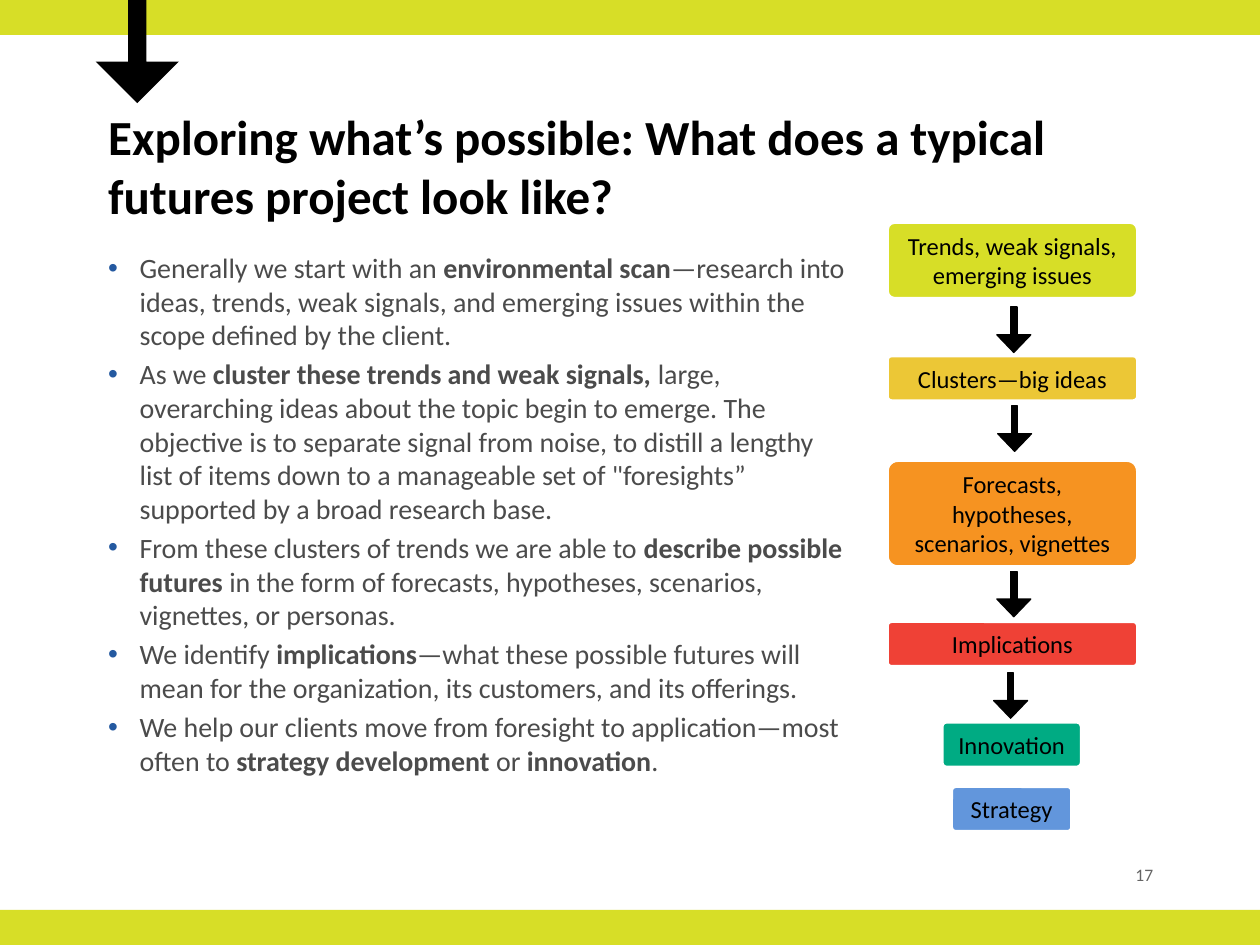
from typing import NamedTuple

from lxml.etree import SubElement
from pptx import Presentation
from pptx.dml.color import RGBColor
from pptx.enum.shapes import MSO_SHAPE as Preset
from pptx.enum.text import MSO_ANCHOR as Anchor, PP_ALIGN as Align
from pptx.oxml.ns import qn
from pptx.util import Pt

FONT = "Calibri"
BLACK = RGBColor(0, 0, 0)
WHITE = RGBColor(255, 255, 255)
LIME = RGBColor(0xD7, 0xDE, 0x27)
YELLOW = RGBColor(0xEC, 0xC7, 0x36)
ORANGE = RGBColor(0xF6, 0x93, 0x21)
RED = RGBColor(0xEF, 0x41, 0x36)
GREEN = RGBColor(0x00, 0xAB, 0x83)
BLUE = RGBColor(0x62, 0x96, 0xDC)
BULLET_BLUE = RGBColor(0x24, 0x59, 0xA0)
BODY_GRAY = RGBColor(0x4B, 0x4B, 0x4B)
NUMBER_GRAY = RGBColor(0x64, 0x64, 0x64)

PAGE_WIDTH, PAGE_HEIGHT = 720, 540
BAND_HEIGHT = 20
LEFT_MARGIN = 54.7
INDENT = 18
STEP_LEFT, STEP_WIDTH, STEP_HEIGHT = 506.9, 143.3, 26


class Area(NamedTuple):
    left: float
    top: float
    width: float
    height: float


class Step(NamedTuple):
    text: str
    color: RGBColor
    top: float
    height: float = STEP_HEIGHT
    left: float = STEP_LEFT
    width: float = STEP_WIDTH


class Arrow(NamedTuple):
    center: float
    top: float


class Span(NamedTuple):
    text: str
    bold: bool = False


STEPS = [
    Step("Trends, weak signals, emerging issues", LIME, 126.9, 43.8),
    Step("Clusters—big ideas", YELLOW, 203.2),
    Step("Forecasts, hypotheses, scenarios, vignettes", ORANGE, 263, 61),
    Step("Implications", RED, 355),
    Step("Innovation", GREEN, 412.5, left=538.2, width=79.8),
    Step("Strategy", BLUE, 449.3, left=543.6, width=69),
]
ARROWS = [Arrow(579.3, 175.5), Arrow(579.8, 232), Arrow(579.3, 326.5), Arrow(577.5, 384.5)]
BULLETS = [
    [
        Span("Generally we start with an "),
        Span("environmental scan", True),
        Span("—research into ideas, trends, weak signals, and emerging issues "
             "within the scope defined by the client."),
    ],
    [
        Span("As we "),
        Span("cluster these trends and weak signals, ", True),
        Span("large, overarching ideas about the topic begin to emerge. The objective "
             "is to separate signal from noise, to distill a lengthy list of items down "
             "to a manageable set of \"foresights” supported by a broad research base."),
    ],
    [
        Span("From these clusters of trends we are able to "),
        Span("describe possible futures ", True),
        Span("in the form of forecasts, hypotheses, scenarios, vignettes, or personas."),
    ],
    [
        Span("We identify "),
        Span("implications", True),
        Span("—what these possible futures will mean for the organization, "
             "its customers, and its offerings."),
    ],
    [
        Span("We help our clients move from foresight to application—most often to "),
        Span("strategy development ", True),
        Span("or "),
        Span("innovation", True),
        Span("."),
    ],
]


def set_font(font, size: float, color: RGBColor, bold: bool = False) -> None:
    font.name = FONT
    font.size = Pt(size)
    font.color.rgb = color
    font.bold = bold


def add_block(page, preset, area: Area, color: RGBColor, line=None, weight: float = 0.75):
    block = page.shapes.add_shape(preset, *map(Pt, area))
    block.shadow.inherit = False
    block.fill.solid()
    block.fill.fore_color.rgb = color
    if line is None:
        block.line.fill.background()
    else:
        block.line.color.rgb = line
        block.line.width = Pt(weight)
    return block


def add_text_box(page, area: Area, anchor):
    frame = page.shapes.add_textbox(*map(Pt, area)).text_frame
    frame.word_wrap = True
    frame.vertical_anchor = anchor
    return frame


def write_line(frame, text: str, size: float, color: RGBColor, align, bold: bool = False) -> None:
    frame.text = text
    paragraph = frame.paragraphs[0]
    paragraph.alignment = align
    set_font(paragraph.runs[0].font, size, color, bold)


def add_bullet(paragraph) -> None:
    properties = paragraph._p.get_or_add_pPr()
    properties.set("marL", str(Pt(INDENT)))
    properties.set("indent", str(Pt(-INDENT)))
    color = SubElement(properties, qn("a:buClr"))
    SubElement(color, qn("a:srgbClr"), val=str(BULLET_BLUE))
    SubElement(properties, qn("a:buFont"), typeface="Arial")
    SubElement(properties, qn("a:buChar"), char="•")


def write_bullets(frame, bullets: list[list[Span]]) -> None:
    for index, spans in enumerate(bullets):
        paragraph = frame.add_paragraph() if index else frame.paragraphs[0]
        add_bullet(paragraph)
        if index:
            paragraph.space_before = Pt(3.2)
        for span in spans:
            run = paragraph.add_run()
            run.text = span.text
            set_font(run.font, 16, BODY_GRAY, span.bold)


def draw_step(page, step: Step) -> None:
    area = Area(step.left, step.top, step.width, step.height)
    box = add_block(page, Preset.ROUNDED_RECTANGLE, area, step.color, WHITE, 2)
    box.adjustments[0] = 0.1
    box.text_frame.word_wrap = True
    box.text_frame.vertical_anchor = Anchor.MIDDLE
    write_line(box.text_frame, step.text, 14, BLACK, Align.CENTER)


def draw_arrow(page, arrow: Arrow) -> None:
    stem = Area(arrow.center - 1.8, arrow.top, 3.6, 20.9)
    head = Area(arrow.center - 9.7, arrow.top + 15.8, 19.4, 10.1)
    add_block(page, Preset.RECTANGLE, stem, BLACK, BLACK)
    add_block(page, Preset.ISOSCELES_TRIANGLE, head, BLACK, BLACK).rotation = 180


def main() -> None:
    deck = Presentation()
    deck.slide_width, deck.slide_height = Pt(PAGE_WIDTH), Pt(PAGE_HEIGHT)
    page = deck.slides.add_slide(deck.slide_layouts[6])

    for top in (0, PAGE_HEIGHT - BAND_HEIGHT):
        add_block(page, Preset.RECTANGLE, Area(0, top, PAGE_WIDTH, BAND_HEIGHT), LIME)
    marker = add_block(page, Preset.DOWN_ARROW, Area(LEFT_MARGIN, 0, 47.5, 59), BLACK)
    marker.adjustments[0] = 0.218

    title = add_text_box(page, Area(LEFT_MARGIN, 49.7, 611.3, 90), Anchor.MIDDLE)
    write_line(title, "Exploring what’s possible: What does a typical futures project look like?",
               28, BLACK, Align.LEFT, True)
    body = add_text_box(page, Area(LEFT_MARGIN, 139.7, 437.8, 337), Anchor.TOP)
    write_bullets(body, BULLETS)
    number = add_text_box(page, Area(637.2, 491, 28.8, 17.3), Anchor.MIDDLE)
    write_line(number, "17", 10, NUMBER_GRAY, Align.RIGHT)

    for step in STEPS:
        draw_step(page, step)
    for arrow in ARROWS:
        draw_arrow(page, arrow)
    deck.save("out.pptx")


if __name__ == "__main__":
    main()
